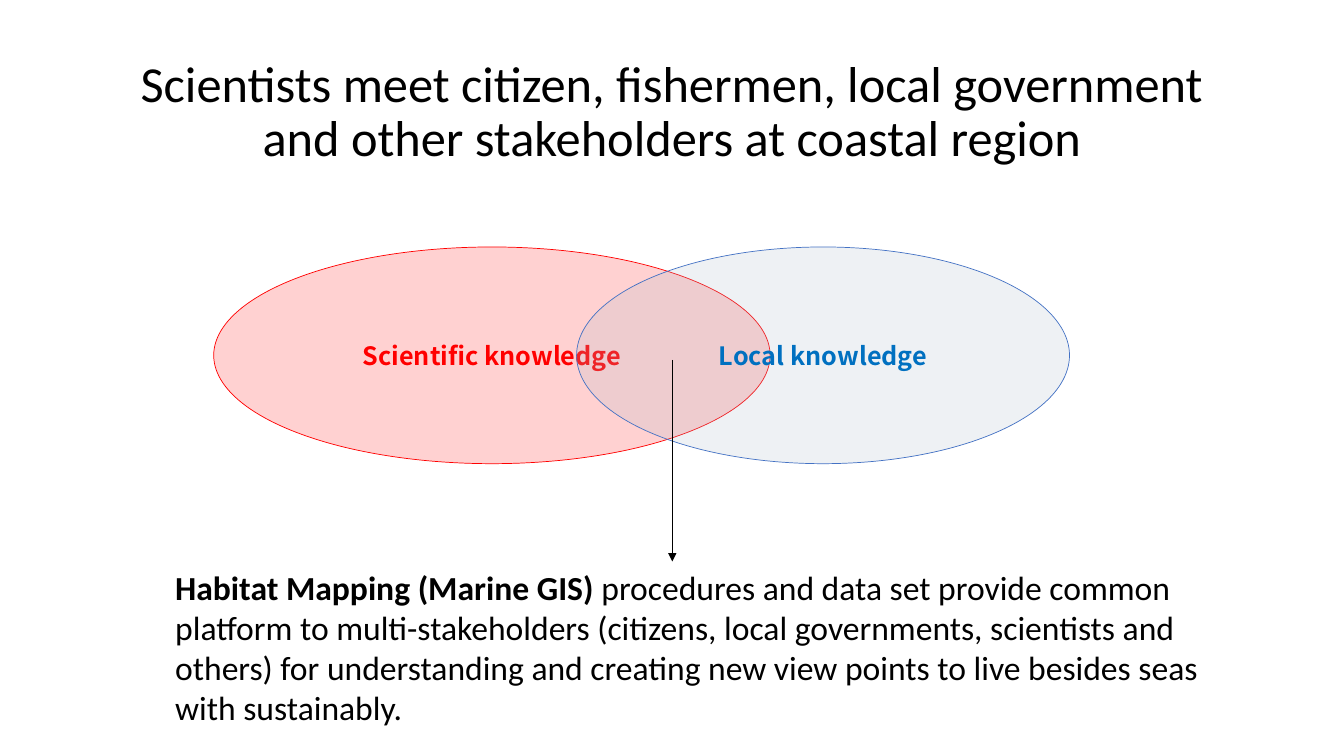
"""Build the slide on scientific and local knowledge meeting in habitat mapping."""
from dataclasses import dataclass

from lxml.etree import SubElement
from pptx import Presentation
from pptx.dml.color import RGBColor
from pptx.enum.shapes import MSO_CONNECTOR as Line, MSO_SHAPE as Shape
from pptx.enum.text import MSO_ANCHOR as Anchor, MSO_AUTO_SIZE as AutoSize, PP_ALIGN as Align
from pptx.oxml.ns import qn
from pptx.slide import Slide
from pptx.util import Pt

BLACK = "000000"
BODY_FONT = "Calibri"
KNOWLEDGE_FONT = "Noto Sans CJK JP"
KNOWLEDGE_TOP, KNOWLEDGE_HEIGHT = 176.4, 154.8
OVERLAP_X, OVERLAP_Y, MAPPING_TOP = 480.24, 257.04, 401.04


@dataclass
class Knowledge:
    label: str
    left: float
    width: float
    fill: str
    opacity: int
    outline: str
    ink: str


KNOWLEDGE = [
    Knowledge("Scientific knowledge", 152.64, 397.44, "FF0000", 18, "FF0000", "FF0000"),
    Knowledge("Local knowledge", 411.84, 352.08, "ADB9CA", 20, "4472C4", "0070C0"),
]


def paint(color, value: str) -> None:
    color.rgb = RGBColor.from_string(value)


def style(font, name: str, size: float, color: str, bold: bool = False) -> None:
    font.name = name
    font.size = Pt(size)
    font.bold = bold
    paint(font.color, color)


def add_title(slide: Slide, text: str) -> None:
    title = slide.shapes.title
    title.left, title.top, title.width, title.height = Pt(66), Pt(28.8), Pt(828), Pt(104.4)
    frame = title.text_frame
    frame.text = text
    frame.word_wrap = True
    frame.auto_size = AutoSize.NONE
    frame.vertical_anchor = Anchor.MIDDLE
    heading = frame.paragraphs[0]
    heading.alignment = Align.CENTER
    heading.line_spacing = 0.9
    style(heading.runs[0].font, BODY_FONT, 36, BLACK)


def add_knowledge(slide: Slide, knowledge: Knowledge) -> None:
    ellipse = slide.shapes.add_shape(
        Shape.OVAL, Pt(knowledge.left), Pt(KNOWLEDGE_TOP), Pt(knowledge.width), Pt(KNOWLEDGE_HEIGHT)
    )
    ellipse.shadow.inherit = False
    ellipse.fill.solid()
    paint(ellipse.fill.fore_color, knowledge.fill)
    tint = ellipse.fill._xPr.find(qn("a:solidFill"))[0]
    SubElement(tint, qn("a:alpha"), val=str(knowledge.opacity * 1000))
    paint(ellipse.line.color, knowledge.outline)
    ellipse.line.width = Pt(0.5)
    frame = ellipse.text_frame
    frame.text = knowledge.label
    frame.vertical_anchor = Anchor.MIDDLE
    label = frame.paragraphs[0]
    label.alignment = Align.CENTER
    style(label.runs[0].font, KNOWLEDGE_FONT, 18, knowledge.ink, bold=True)


def add_arrow(slide: Slide) -> None:
    arrow = slide.shapes.add_connector(
        Line.STRAIGHT, Pt(OVERLAP_X), Pt(OVERLAP_Y), Pt(OVERLAP_X), Pt(MAPPING_TOP)
    )
    paint(arrow.line.color, BLACK)
    arrow.line.width = Pt(1)
    SubElement(arrow.line._get_or_add_ln(), qn("a:tailEnd"), type="triangle")
    SubElement(arrow._element.spPr, qn("a:effectLst"))


def add_mapping(slide: Slide, term: str, explanation: str) -> None:
    mapping = slide.shapes.add_textbox(Pt(118.08), Pt(MAPPING_TOP), Pt(756), Pt(123.84))
    frame = mapping.text_frame
    frame.word_wrap = True
    frame.auto_size = AutoSize.SHAPE_TO_FIT_TEXT
    for text, bold in ((term, True), (explanation, False)):
        run = frame.paragraphs[0].add_run()
        run.text = text
        style(run.font, BODY_FONT, 24, BLACK, bold)


def main() -> None:
    deck = Presentation()
    deck.slide_width, deck.slide_height = Pt(960), Pt(540)
    slide = deck.slides.add_slide(deck.slide_layouts.get_by_name("Title Only"))
    add_title(
        slide,
        "Scientists meet citizen, fishermen, local government "
        "and other stakeholders at coastal region",
    )
    for knowledge in KNOWLEDGE:
        add_knowledge(slide, knowledge)
    add_arrow(slide)
    add_mapping(
        slide,
        "Habitat Mapping (Marine GIS) ",
        "procedures and data set provide common platform to multi-stakeholders "
        "(citizens, local governments, scientists and others) for understanding and "
        "creating new view points to live besides seas with sustainably.",
    )
    deck.save("out.pptx")


if __name__ == "__main__":
    main()
